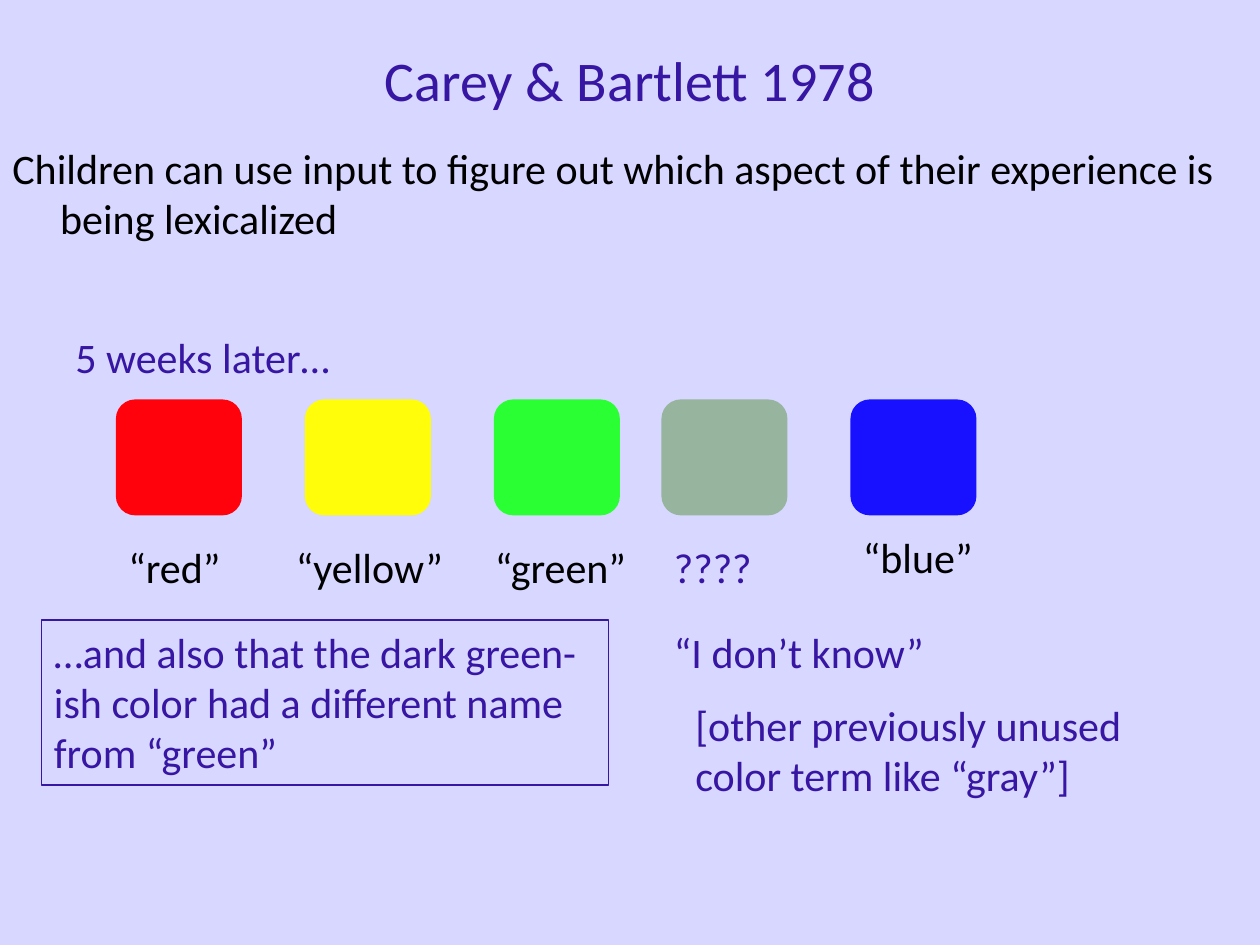
"""Build the slide on how children learn colour words."""
from lxml.etree import SubElement
from pptx import Presentation
from pptx.dml.color import RGBColor
from pptx.enum.shapes import MSO_SHAPE as Shape
from pptx.enum.text import MSO_ANCHOR as Anchor, MSO_AUTO_SIZE as Auto, PP_ALIGN as Align
from pptx.oxml.ns import qn
from pptx.util import Inches, Pt

INK, BLACK = "3616A2", "000000"


def tint(code):
    return RGBColor.from_string(code)


def write(text, x, y, w, h, color=INK, size=24, fit=Auto.SHAPE_TO_FIT_TEXT):
    box = slide.shapes.add_textbox(Inches(x), Inches(y), Inches(w), Inches(h))
    frame = box.text_frame
    frame.word_wrap = True
    frame.auto_size = fit
    run = frame.paragraphs[0].add_run()
    run.text = text
    run.font.name = "Calibri"
    run.font.size = Pt(size)
    run.font.color.rgb = tint(color)
    return box


deck = Presentation()
deck.slide_width, deck.slide_height = Inches(10), Inches(7.5)
slide = deck.slides.add_slide(deck.slide_layouts[6])
slide.background.fill.solid()
slide.background.fill.fore_color.rgb = tint("D7D7FF")

title = write("Carey & Bartlett 1978", 0.75, 0, 8.5, 1.25, size=32, fit=Auto.NONE)
title.text_frame.vertical_anchor = Anchor.MIDDLE
title.text_frame.paragraphs[0].alignment = Align.CENTER

claim = write(
    "Children can use input to figure out which aspect of their experience is being lexicalized",
    0, 1.08, 9.83, 1.5, BLACK, fit=Auto.NONE)
props = claim.text_frame.paragraphs[0]._p.get_or_add_pPr()
props.set("marL", str(Inches(0.38)))
props.set("indent", str(Inches(-0.38)))

write("5 weeks later…", 0.5, 2.58, 6, 0.5)

chips = [
    (0.92, "FF020C", 100, "“red”", 0.92, 4.25, 1, BLACK),
    (2.42, "FFFD09", 100, "“yellow”", 2.25, 4.25, 1.5, BLACK),
    (3.92, "2AFF33", 100, "“green”", 3.83, 4.25, 1.5, BLACK),
    (5.25, "4D8D2D", 46, "????", 5.25, 4.25, 1.17, INK),
    (6.75, "1711FF", 100, "“blue”", 6.75, 4.17, 1.17, BLACK),
]
for left, fill, alpha, name, x, y, wide, color in chips:
    chip = slide.shapes.add_shape(
        Shape.ROUNDED_RECTANGLE, Inches(left), Inches(3.17), Inches(1), Inches(0.92))
    chip.shadow.inherit = False
    chip.fill.solid()
    chip.fill.fore_color.rgb = tint(fill)
    chip.line.fill.background()
    if alpha < 100:
        shade = chip._element.spPr.find(qn("a:solidFill"))[0]
        SubElement(shade, qn("a:alpha")).set("val", str(alpha * 1000))
    write(name, x, y, wide, 0.5, color)

write("“I don’t know”", 5.25, 4.92, 2.42, 0.5)
write("[other previously unused color term like “gray”]", 5.42, 5.5, 4.25, 0.91)
note = write(
    "…and also that the dark green-ish color had a different name from “green”",
    0.33, 4.92, 4.5, 1.31)
note.line.color.rgb = tint(INK)
note.line.width = Pt(0.75)

deck.save("out.pptx")
